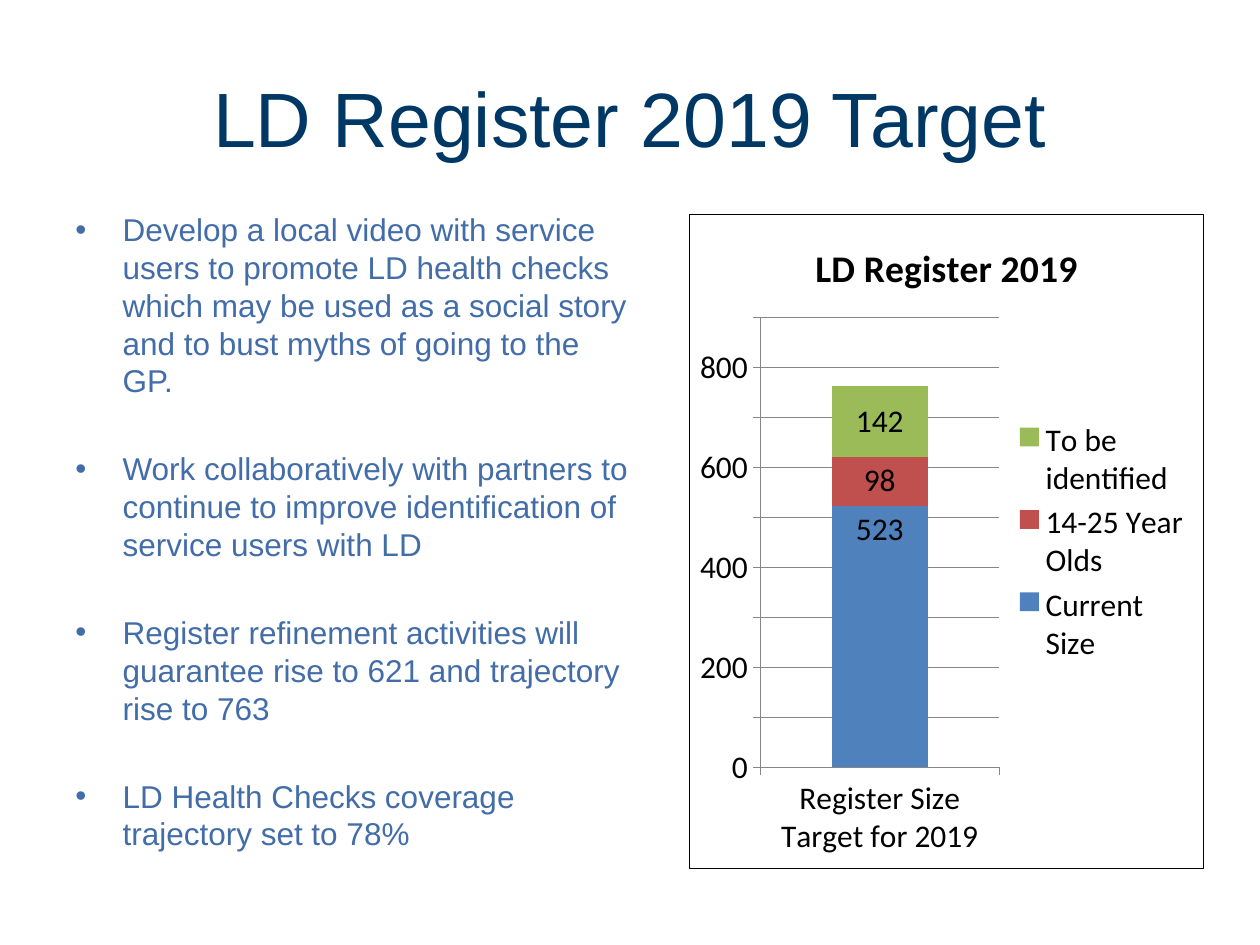
import lxml.etree
import pptx
import pptx.chart.data
import pptx.dml.color
import pptx.enum.chart
import pptx.enum.text
import pptx.oxml
import pptx.oxml.ns
import pptx.util

Pt = pptx.util.Pt
RGB = pptx.dml.color.RGBColor
qn = pptx.oxml.ns.qn
LABEL = pptx.enum.chart.XL_LABEL_POSITION

NAVY = RGB(0x00, 0x38, 0x65)
BLUE = RGB(0x42, 0x6D, 0xA9)
BLACK = RGB(0, 0, 0)
GREY = RGB(0x86, 0x86, 0x86)

POINTS = [
    "Develop a local video with service users to promote LD health checks "
    "which may be used as a social story and to bust myths of going to the GP.",
    "Work collaboratively with partners to continue to improve identification "
    "of service users with LD",
    "Register refinement activities will guarantee rise to 621 and trajectory "
    "rise to 763",
    "LD Health Checks coverage trajectory set to 78%",
]
SERIES = [
    ("Current Size", 523, RGB(0x4F, 0x81, 0xBD), LABEL.INSIDE_END),
    ("14-25 Year Olds", 98, RGB(0xC0, 0x50, 0x4D), LABEL.INSIDE_END),
    ("To be identified", 142, RGB(0x9B, 0xBB, 0x59), LABEL.CENTER),
]


def style(font, name, size, color, bold=False):
    font.name, font.size, font.bold = name, Pt(size), bold
    font.color.rgb = color


def add_title(slide, text):
    title = slide.shapes.title
    title.left, title.top, title.width, title.height = Pt(36), Pt(21.6), Pt(648), Pt(90)
    frame = title.text_frame
    frame.text = text
    frame.vertical_anchor = pptx.enum.text.MSO_ANCHOR.MIDDLE
    para = frame.paragraphs[0]
    para.alignment = pptx.enum.text.PP_ALIGN.CENTER
    style(para.runs[0].font, "Arial", 44, NAVY)


def add_bullet(para):
    props = para._p.get_or_add_pPr()
    props.set("marL", str(Pt(27)))
    props.set("indent", str(-Pt(27)))
    font = lxml.etree.SubElement(props, qn("a:buFont"))
    font.set("typeface", "Arial")
    mark = lxml.etree.SubElement(props, qn("a:buChar"))
    mark.set("char", "•")


def add_list(slide, points):
    box = slide.shapes.add_textbox(Pt(36), Pt(116.6), Pt(330), Pt(396.7))
    frame = box.text_frame
    frame.word_wrap = True
    frame.text = "\n".join(points)
    for index, para in enumerate(frame.paragraphs):
        add_bullet(para)
        para.line_spacing = Pt(21.6)
        para.space_before = Pt(28.7 if index else 0)
        style(para.runs[0].font, "Arial", 18, BLUE)


def add_border(chart):
    space = chart._chartSpace
    props = pptx.oxml.parse_xml(
        '<c:spPr xmlns:c="http://schemas.openxmlformats.org/drawingml/2006/chart"'
        ' xmlns:a="http://schemas.openxmlformats.org/drawingml/2006/main">'
        '<a:noFill/><a:ln w="9525"><a:solidFill><a:srgbClr val="000000"/>'
        '</a:solidFill></a:ln></c:spPr>')
    space.find(qn("c:chart")).addnext(props)


def style_axes(chart):
    value = chart.value_axis
    value.minimum_scale, value.maximum_scale, value.major_unit = 0, 900, 100
    value.has_major_gridlines = True
    value.major_gridlines.format.line.color.rgb = GREY
    for axis in (value, chart.category_axis):
        axis.major_tick_mark = pptx.enum.chart.XL_TICK_MARK.OUTSIDE
        axis.format.line.color.rgb = GREY


def add_chart(slide):
    data = pptx.chart.data.CategoryChartData()
    data.categories = ["Register Size Target for 2019"]
    for name, value, _, _ in SERIES:
        data.add_series(name, [value])
    chart = slide.shapes.add_chart(
        pptx.enum.chart.XL_CHART_TYPE.COLUMN_STACKED,
        Pt(393.8), Pt(122.4), Pt(294.5), Pt(374.4), data).chart
    style(chart.font, "Calibri", 18, BLACK)
    chart.has_title = True
    frame = chart.chart_title.text_frame
    frame.text = "LD Register 2019"
    style(frame.paragraphs[0].runs[0].font, "Calibri", 21.6, BLACK, True)
    chart.has_legend = True
    chart.legend.position = pptx.enum.chart.XL_LEGEND_POSITION.RIGHT
    chart.legend.include_in_layout = False
    plot = chart.plots[0]
    plot.gap_width, plot.overlap, plot.vary_by_categories = 150, 100, False
    for series, (_, _, color, place) in zip(plot.series, SERIES):
        series.format.fill.solid()
        series.format.fill.fore_color.rgb = color
        series.data_labels.show_value = True
        series.data_labels.position = place
    style_axes(chart)
    add_border(chart)


def main():
    deck = pptx.Presentation()
    deck.slide_width, deck.slide_height = Pt(720), Pt(540)
    slide = deck.slides.add_slide(deck.slide_layouts[5])
    add_title(slide, "LD Register 2019 Target")
    add_chart(slide)
    add_list(slide, POINTS)
    deck.save("out.pptx")


if __name__ == "__main__":
    main()
